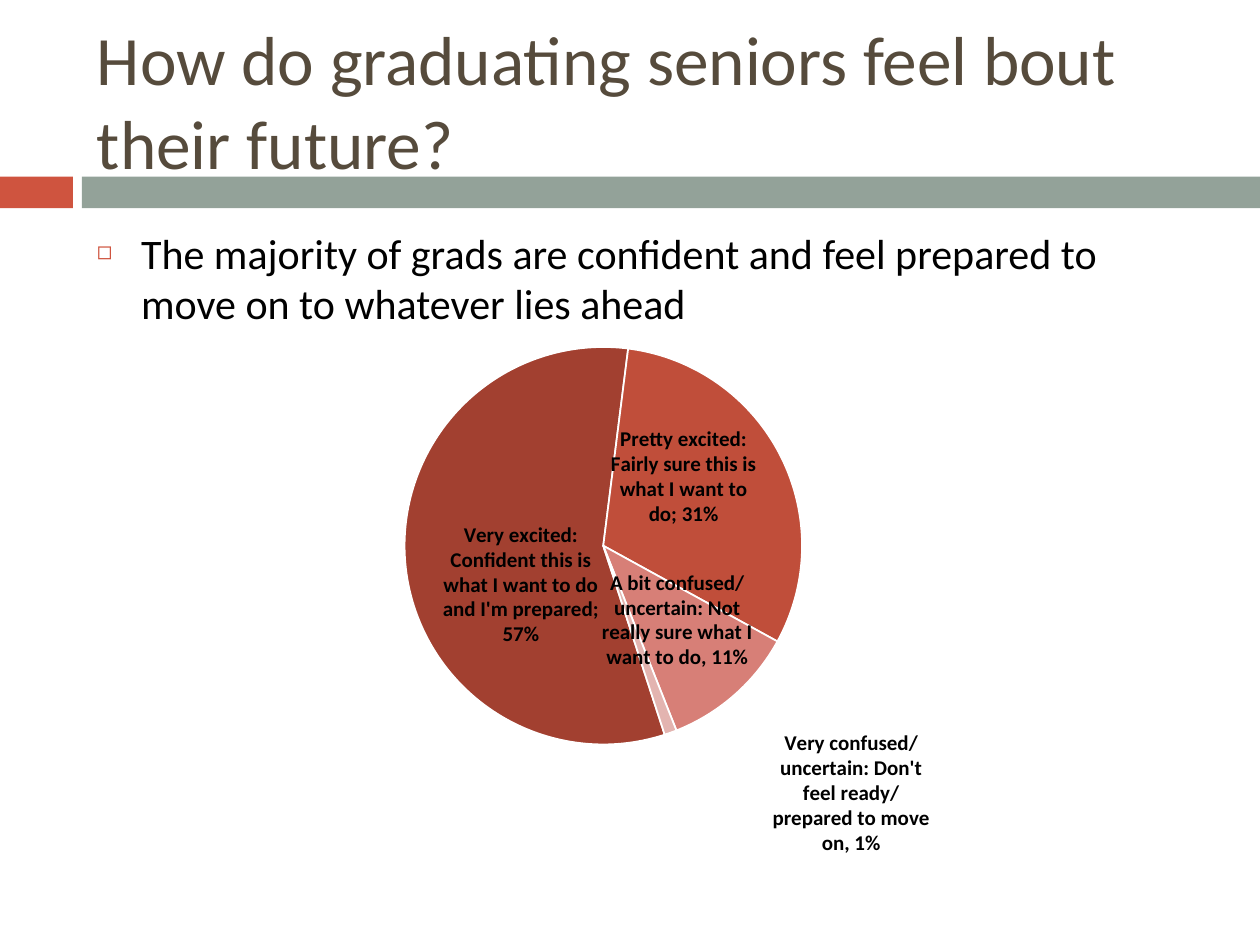
from lxml import etree
from pptx import Presentation
from pptx import util as u
from pptx.chart import data
from pptx.dml.color import RGBColor
from pptx.enum import chart as ch
from pptx.enum import shapes, text
from pptx.oxml import parse_xml
from pptx.oxml.ns import nsdecls, qn

FONT = "Calibri"
COLORS = {
    "accent": "CF543F", "band": "93A299", "title": "564B3C",
    "text": "000000", "white": "FFFFFF",
}
TITLE = "How do graduating seniors feel bout their future?"
BODY = "The majority of grads are confident and feel prepared to move on to whatever lies ahead"
BARS = [(0, 1.47, "accent"), (1.65, 23.75, "band")]
ANSWERS = [
    {"name": "Very excited: Confident this is what I want to do and I'm prepared",
     "value": 0.57, "fill": "A24030", "shift": (0.02, 0.05)},
    {"name": "Pretty excited: Fairly sure this is what I want to do",
     "value": 0.31, "fill": "C04E3A", "shift": (-0.01, -0.04)},
    {"name": "A bit confused/uncertain: Not really sure what I want to do",
     "value": 0.11, "fill": "D77F77", "shift": (0.01, 0),
     "label": ["A bit confused/", "uncertain: Not really sure what I want to do, 11%"]},
    {"name": "Very confused/uncertain: Don't feel ready/prepared to move on",
     "value": 0.01, "fill": "E3B4B0", "shift": (0.26, 0.26),
     "label": ["Very confused/", "uncertain: Don't feel ready/prepared to move on, 1%"]},
]
PIE_AREA = {"x": 0.27, "y": 0.09, "w": 0.49, "h": 0.67}


def rgb(name):
    return RGBColor.from_string(COLORS.get(name, name))


def style(font, size, color, bold=False):
    font.name, font.size, font.bold = FONT, u.Pt(size), bold
    font.color.rgb = rgb(color)


def place(sp, left, top, width, height):
    sp.left, sp.top, sp.width, sp.height = map(u.Cm, (left, top, width, height))


def fill_text(sp, content, size, color, anchor):
    tf = sp.text_frame
    tf.auto_size = text.MSO_AUTO_SIZE.NONE
    tf.word_wrap = True
    tf.vertical_anchor = anchor
    p = tf.paragraphs[0]
    p.alignment = text.PP_ALIGN.LEFT
    r = p.add_run()
    r.text = content
    style(r.font, size, color)
    return p


def add_bullet(p):
    pPr = p._p.get_or_add_pPr()
    pPr.set("marL", str(u.Cm(0.89)))
    pPr.set("indent", str(u.Cm(-0.89)))
    color = etree.SubElement(pPr, qn("a:buClr"))
    etree.SubElement(color, qn("a:srgbClr"), val=COLORS["accent"])
    etree.SubElement(pPr, qn("a:buSzPct"), val="60000")
    etree.SubElement(pPr, qn("a:buChar"), char="◻")


def layout_xml(values, inner=False):
    parts = '<c:layoutTarget val="inner"/>' if inner else ""
    if inner:
        parts += '<c:xMode val="edge"/><c:yMode val="edge"/>'
    parts += "".join(f'<c:{k} val="{v}"/>' for k, v in values.items())
    return parse_xml(f'<c:layout {nsdecls("c")}><c:manualLayout>{parts}</c:manualLayout></c:layout>')


def format_label(label, answer):
    if "label" in answer:
        tf = label.text_frame
        for i, line in enumerate(answer["label"]):
            p = tf.paragraphs[0] if i == 0 else tf.add_paragraph()
            r = p.add_run()
            r.text = line
            style(r.font, 12, "text", True)
    else:
        style(label.font, 12, "text", True)
    label.position = ch.XL_LABEL_POSITION.CENTER
    dLbl = label._get_or_add_dLbl()
    dLbl.find(qn("c:showCatName")).set("val", "1")
    dLbl.find(qn("c:showVal")).set("val", "1")
    for old in dLbl.findall(qn("c:layout")):
        dLbl.remove(old)
    dLbl.find(qn("c:idx")).addnext(layout_xml(dict(zip("xy", answer["shift"]))))
    separator = etree.Element(qn("c:separator"))
    separator.text = "; "
    dLbl.find(qn("c:showBubbleSize")).addprevious(separator)
    separator.addprevious(separator.getnext())


def add_pie(s):
    cd = data.CategoryChartData(number_format="0%")
    cd.categories = [a["name"] for a in ANSWERS]
    cd.add_series("Series 1", [a["value"] for a in ANSWERS])
    box = map(u.Cm, (3.61, 5.92, 16.61, 11.96))
    chart = s.shapes.add_chart(ch.XL_CHART_TYPE.PIE, *box, cd).chart
    chart.has_title = False
    chart.has_legend = False
    style(chart.font, 10, "text")
    plot = chart.plots[0]
    plot.vary_by_categories = True
    angle = etree.SubElement(plot._element, qn("c:firstSliceAng"))
    angle.set("val", "162")
    for extra in plot._element.findall(qn("c:firstSliceAng"))[:-1]:
        plot._element.remove(extra)
    series = plot.series[0]
    labels = series.data_labels
    labels.show_value = labels.show_category_name = True
    labels.number_format, labels.number_format_is_linked = "0%", False
    style(labels.font, 12, "text", True)
    leader = labels._element.find(qn("c:showLeaderLines"))
    if leader is not None:
        leader.set("val", "0")
    for i, answer in enumerate(ANSWERS):
        point = series.points[i]
        point.format.fill.solid()
        point.format.fill.fore_color.rgb = rgb(answer["fill"])
        point.format.line.color.rgb = rgb("white")
        point.format.line.width = u.Pt(1)
        format_label(point.data_label, answer)
    area = plot._element.getparent()
    for old in area.findall(qn("c:layout")):
        area.remove(old)
    area.insert(0, layout_xml(PIE_AREA, inner=True))


def main():
    prs = Presentation()
    prs.slide_width, prs.slide_height = u.Cm(25.4), u.Cm(19.05)
    s = prs.slides.add_slide(prs.slide_layouts[1])
    for left, width, color in BARS:
        sp = s.shapes.add_shape(shapes.MSO_SHAPE.RECTANGLE, *map(u.Cm, (left, 3.56, width, 0.64)))
        sp.shadow.inherit = False
        sp.fill.solid()
        sp.fill.fore_color.rgb = rgb(color)
        sp.line.fill.background()
    title, body = s.shapes.title, s.placeholders[1]
    place(title, 1.7, 0.64, 22.66, 2.74)
    fill_text(title, TITLE, 39.6, "title", text.MSO_ANCHOR.MIDDLE)
    place(body, 1.7, 4.45, 22.66, 12.5)
    p = fill_text(body, BODY, 24, "text", text.MSO_ANCHOR.TOP)
    p.space_before = u.Pt(7)
    add_bullet(p)
    add_pie(s)
    prs.save("out.pptx")


if __name__ == "__main__":
    main()
